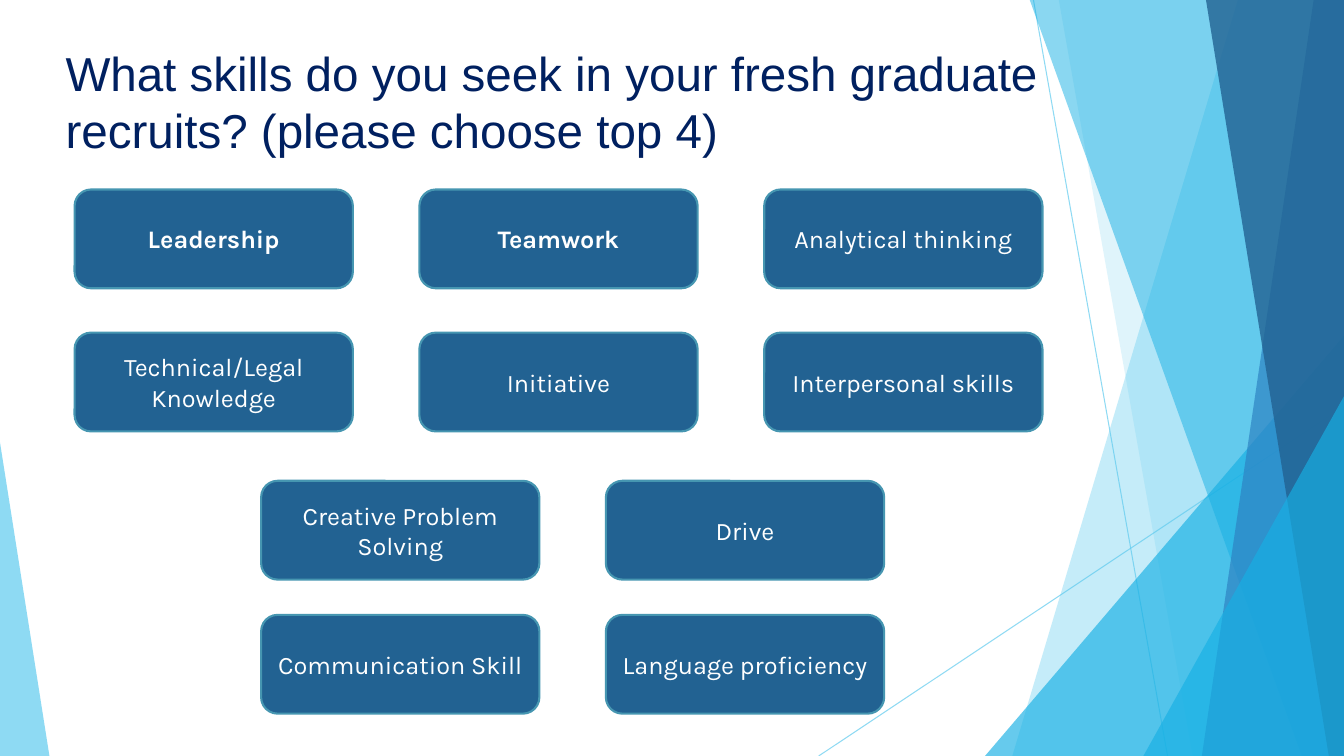
from lxml.etree import SubElement
from pptx import Presentation
from pptx.dml.color import RGBColor
from pptx.enum.shapes import MSO_CONNECTOR as Connector, MSO_SHAPE as Shape
from pptx.enum.text import MSO_ANCHOR as Anchor, MSO_AUTO_SIZE as AutoSize, PP_ALIGN as Align
from pptx.oxml.ns import qn
from pptx.util import Emu, Pt

WIDTH, HEIGHT = 1333, 750
SKY, CYAN, BLUE, STEEL = "5FCBEF", "17B0E4", "2E83C3", "226292"
NAVY, TEAL, WHITE = "002060", "4696B1", "FFFFFF"


def px(length):
    """100 px to the inch."""
    return Emu(length * 9144)


def paint(color_format, color, opacity=100):
    color_format.rgb = RGBColor.from_string(color)
    if opacity < 100:
        for node in color_format._xFill.iter(qn("a:srgbClr")):
            SubElement(node, qn("a:alpha"), val=str(opacity * 1000))


class SkillPage:
    title_font, box_font = "Arial", "Karla"

    def __init__(self, deck):
        self.page = deck.slides.add_slide(deck.slide_layouts[5])
        self.shapes = self.page.shapes

    def fill(self, shape, color, opacity=100):
        shape.shadow.inherit = False
        shape.fill.solid()
        paint(shape.fill.fore_color, color, opacity)

    def title(self, text, left, top, width, height):
        box = self.shapes.title
        box.left, box.top, box.width, box.height = map(px, (left, top, width, height))
        frame = box.text_frame
        frame.text = text
        frame.word_wrap = True
        frame.auto_size = AutoSize.NONE
        frame.vertical_anchor = Anchor.TOP
        frame.margin_top = px(7)
        para = frame.paragraphs[0]
        para.alignment = Align.LEFT
        para.line_spacing = Pt(41)
        para.font.size, para.font.name = Pt(34), self.title_font
        paint(para.font.color, NAVY)

    def thin_line(self, *ends):
        line = self.shapes.add_connector(Connector.STRAIGHT, *map(px, ends))
        line.line.width = Pt(0.75)
        line.line.fill.solid()
        paint(line.line.fill.fore_color, SKY, 70)
        SubElement(line._element.spPr, qn("a:effectLst"))

    def band(self, top_left, top_right, bottom_right, bottom_left, color, opacity):
        builder = self.shapes.build_freeform(top_left, -1, scale=9144)
        builder.add_line_segments(
            [(top_right, -1), (bottom_right, HEIGHT), (bottom_left, HEIGHT)], close=True)
        shape = builder.convert_to_shape()
        self.fill(shape, color, opacity)
        shape.line.fill.background()

    def corner(self, left, top, width, apex, color, opacity):
        shape = self.shapes.add_shape(
            Shape.ISOSCELES_TRIANGLE, *map(px, (left, top, width, HEIGHT - top)))
        shape.adjustments[0] = apex
        self.fill(shape, color, opacity)
        shape.line.fill.background()

    def skill(self, text, left, top, bold):
        box = self.shapes.add_shape(Shape.ROUNDED_RECTANGLE, *map(px, (left, top, 276, 98)))
        self.fill(box, STEEL)
        box.line.width = Pt(1.5)
        paint(box.line.color, TEAL)
        frame = box.text_frame
        frame.text = text
        frame.word_wrap = True
        frame.vertical_anchor = Anchor.MIDDLE
        para = frame.paragraphs[0]
        para.alignment = Align.CENTER
        para.font.size, para.font.name, para.font.bold = Pt(18), self.box_font, bold
        paint(para.font.color, WHITE)


def main():
    deck = Presentation()
    deck.slide_width, deck.slide_height = px(WIDTH), px(HEIGHT)
    page = SkillPage(deck)

    # Backdrop, from back to front
    page.thin_line(1025, 0, 1158, HEIGHT)
    page.thin_line(WIDTH, 403, 812, HEIGHT)
    page.band(1228, WIDTH, WIDTH, 1004, SKY, 36)
    page.band(1050, WIDTH, WIDTH, 1183, SKY, 20)
    page.corner(977, 333, 356, 1, CYAN, 66)
    page.band(1021, WIDTH, WIDTH, 1291, CYAN, 50)
    page.band(1303, WIDTH, WIDTH, 1192, BLUE, 70)
    page.band(1196, WIDTH, WIDTH, 1318, STEEL, 80)
    page.corner(1134, 393, 199, 1, CYAN, 66)
    page.corner(0, 439, 49, 0, SKY, 70)

    # Question
    page.title("What skills do you seek in your fresh graduate recruits? (please choose top 4)",
               55, 36, 1080, 107)

    # Skills: left edge, top edge and names of each row
    rows = [
        (74, 188, ["Leadership", "Teamwork", "Analytical thinking"]),
        (74, 330, ["Technical/Legal Knowledge", "Initiative", "Interpersonal skills"]),
        (259, 477, ["Creative Problem Solving", "Drive"]),
        (259, 610, ["Communication Skill", "Language proficiency"]),
    ]
    top_choices = {"Leadership", "Teamwork"}
    for left, top, names in rows:
        for column, name in enumerate(names):
            page.skill(name, left + column * 342, top, name in top_choices)

    deck.save("out.pptx")


if __name__ == "__main__":
    main()
